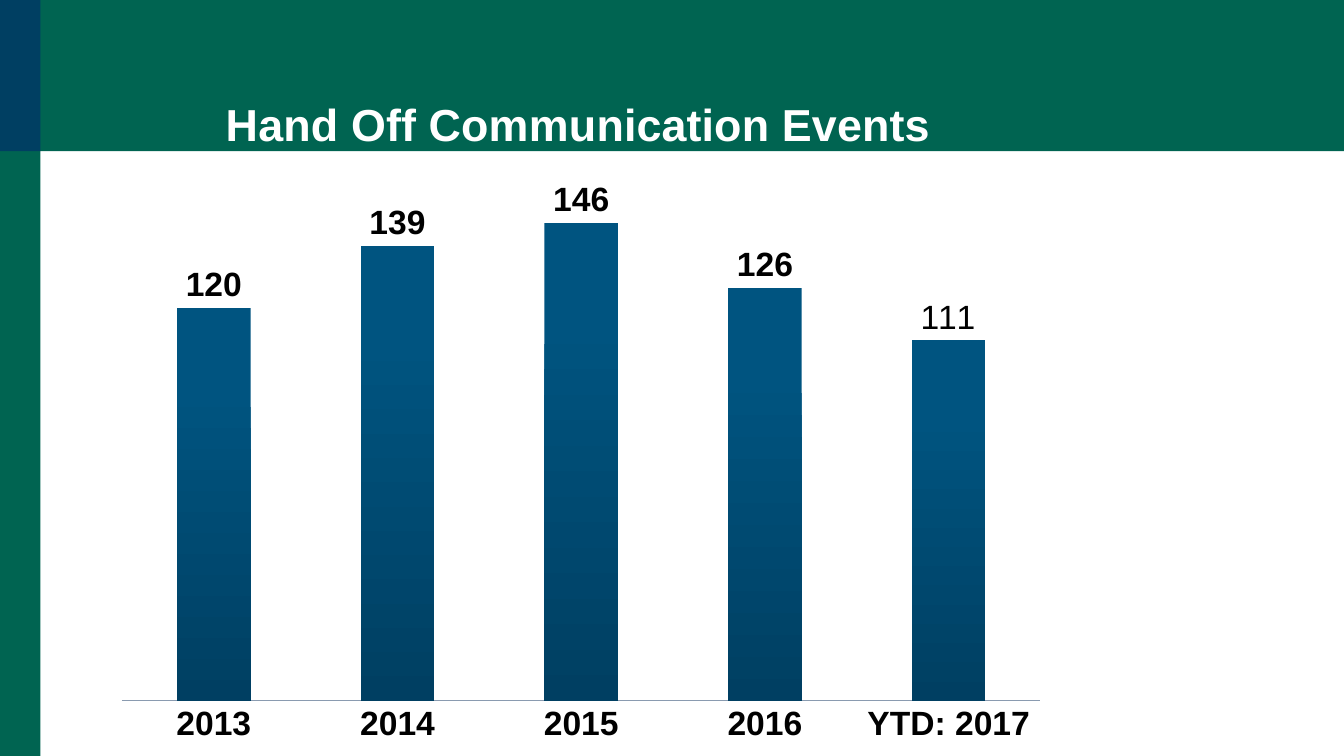
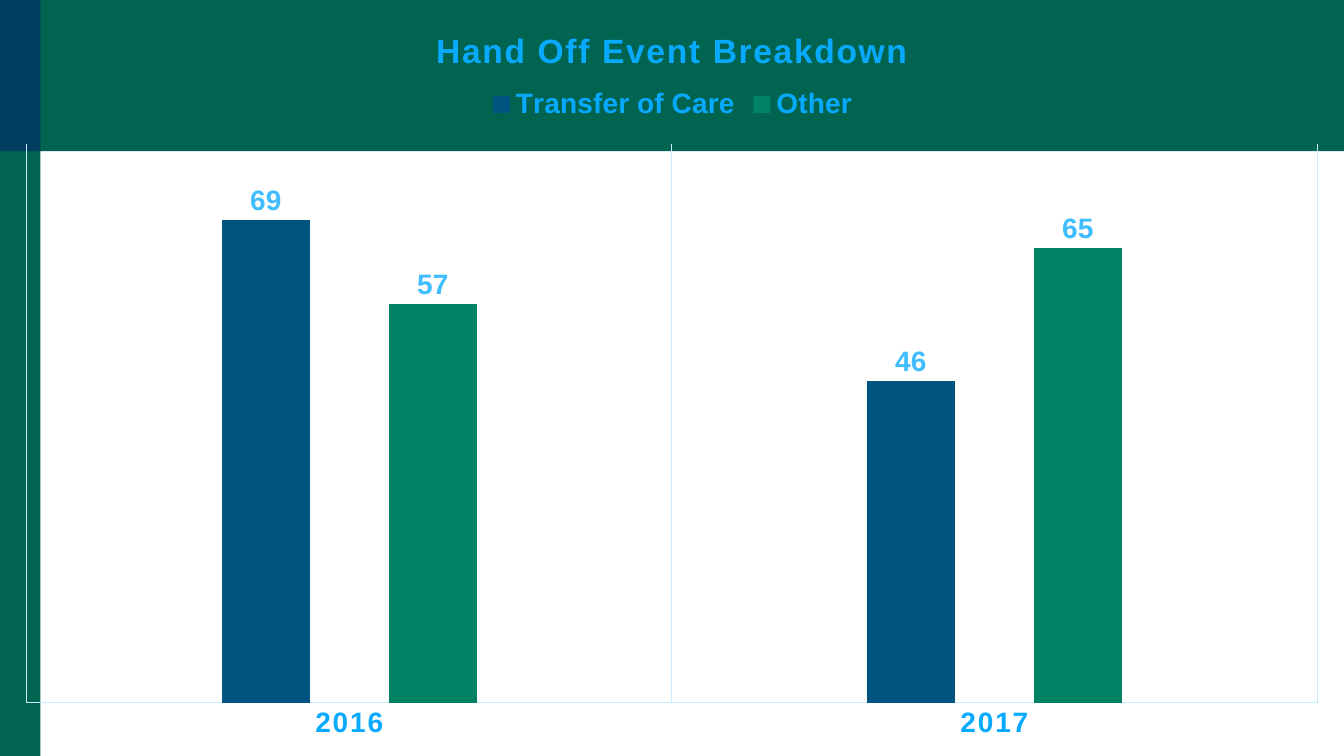
from dataclasses import dataclass
from typing import Optional

from lxml import etree
from pptx import Presentation
from pptx.chart.chart import Chart
from pptx.chart.data import CategoryChartData
from pptx.dml.color import RGBColor
from pptx.enum.chart import XL_CHART_TYPE, XL_LABEL_POSITION, XL_LEGEND_POSITION, XL_TICK_MARK
from pptx.enum.shapes import MSO_SHAPE
from pptx.oxml.ns import qn
from pptx.slide import Slide
from pptx.text.text import Font
from pptx.util import Inches, Pt

COLUMNS = XL_CHART_TYPE.COLUMN_CLUSTERED
OUTSIDE_END = XL_LABEL_POSITION.OUTSIDE_END
LEGEND_TOP = XL_LEGEND_POSITION.TOP
NO_TICK = XL_TICK_MARK.NONE
RECTANGLE = MSO_SHAPE.RECTANGLE

FONT_NAME = "Arial"
WHITE = RGBColor(0xFF, 0xFF, 0xFF)
BLACK = RGBColor(0x00, 0x00, 0x00)
DARK_GREEN = RGBColor(0x00, 0x64, 0x51)
GREEN = RGBColor(0x00, 0x82, 0x65)
NAVY = RGBColor(0x00, 0x3F, 0x62)
BLUE = RGBColor(0x00, 0x54, 0x80)
BRIGHT_BLUE = RGBColor(0x07, 0xAA, 0xFF)
SKY_BLUE = RGBColor(0x40, 0xBD, 0xFF)
PALE_BLUE = RGBColor(0xC6, 0xEB, 0xFF)
GREY_BLUE = RGBColor(0x8A, 0x9B, 0xB0)

SLIDE_WIDTH, SLIDE_HEIGHT = 13.33, 7.5
HEADER_HEIGHT, SIDEBAR_WIDTH = 1.5, 0.4


@dataclass(frozen=True)
class Band:
    width: float
    height: float
    color: RGBColor


@dataclass(frozen=True)
class Series:
    name: str
    values: tuple[int, ...]
    color: RGBColor
    fade_to: Optional[RGBColor] = None


@dataclass(frozen=True)
class ColumnChart:
    title: str
    title_size: int
    title_color: RGBColor
    title_place: tuple[float, float]
    spacing: int
    box: tuple[float, float, float, float]
    plot_place: tuple[float, float, float, float]
    categories: tuple[str, ...]
    series: tuple[Series, ...]
    top_value: int
    gap: int
    overlap: int
    text_size: int
    axis_color: RGBColor
    axis_line: RGBColor
    label_color: RGBColor
    grid: bool = False
    legend_place: Optional[tuple[float, float]] = None


BANDS = (
    Band(SLIDE_WIDTH, HEADER_HEIGHT, DARK_GREEN),
    Band(SIDEBAR_WIDTH, SLIDE_HEIGHT, DARK_GREEN),
    Band(SIDEBAR_WIDTH, HEADER_HEIGHT, NAVY),
)

YEARLY_EVENTS = ColumnChart(
    title="Hand Off Communication Events",
    title_size=32,
    title_color=WHITE,
    title_place=(0.12, 0.03),
    spacing=0,
    box=(1.02, 0.66, 9.49, 6.84),
    plot_place=(0.02, 0.16, 0.96, 0.76),
    categories=("2013", "2014", "2015", "2016", "YTD: 2017"),
    series=(Series("Series 1", (120, 139, 146, 126, 110), BLUE, NAVY),),
    top_value=160,
    gap=150,
    overlap=-25,
    text_size=24,
    axis_color=BLACK,
    axis_line=GREY_BLUE,
    label_color=BLACK,
)

EVENT_BREAKDOWN = ColumnChart(
    title="Hand Off Event Breakdown",
    title_size=24,
    title_color=BRIGHT_BLUE,
    title_place=(0.32, 0.03),
    spacing=120,
    box=(0, 0, SLIDE_WIDTH, SLIDE_HEIGHT),
    plot_place=(0.02, 0.19, 0.96, 0.74),
    categories=("2016", "2017"),
    series=(
        Series("Transfer of Care", (69, 46), BLUE),
        Series("Other", (57, 65), GREEN),
    ),
    top_value=80,
    gap=444,
    overlap=-90,
    text_size=20,
    axis_color=BRIGHT_BLUE,
    axis_line=PALE_BLUE,
    label_color=SKY_BLUE,
    grid=True,
    legend_place=(0.36, 0.11),
)


def style_font(font: Font, size: int, color: RGBColor, bold: bool = True, spacing: int = 0) -> None:
    font.name = FONT_NAME
    font.size = Pt(size)
    font.bold = bold
    font.color.rgb = color
    if spacing:
        font._element.set("spc", str(spacing))


def place(part: etree._Element, index: int, fractions: tuple[float, ...], inner: bool = False) -> None:
    for old_layout in part.findall(qn("c:layout")):
        part.remove(old_layout)
    layout = etree.Element(qn("c:layout"))
    manual = etree.SubElement(layout, qn("c:manualLayout"))
    settings = [("layoutTarget", "inner")] if inner else []
    settings += [("xMode", "edge"), ("yMode", "edge")]
    settings += [(key, str(value)) for key, value in zip("xywh", fractions)]
    for key, value in settings:
        etree.SubElement(manual, qn(f"c:{key}")).set("val", value)
    part.insert(index, layout)


def add_bands(slide: Slide) -> None:
    for band in BANDS:
        rectangle = slide.shapes.add_shape(RECTANGLE, 0, 0, Inches(band.width), Inches(band.height))
        rectangle.shadow.inherit = False
        rectangle.fill.solid()
        rectangle.fill.fore_color.rgb = band.color
        rectangle.line.fill.background()


def style_title(chart: Chart, content: ColumnChart) -> None:
    chart.has_title = True
    run = chart.chart_title.text_frame.paragraphs[0].add_run()
    run.text = content.title
    style_font(run.font, content.title_size, content.title_color, spacing=content.spacing)
    place(chart.chart_title._element, 1, content.title_place)


def style_axes(chart: Chart, content: ColumnChart) -> None:
    value_axis = chart.value_axis
    value_axis.minimum_scale = 0
    value_axis.maximum_scale = content.top_value
    value_axis.has_major_gridlines = False
    value_axis.visible = False
    category_axis = chart.category_axis
    category_axis.major_tick_mark = NO_TICK
    category_axis.minor_tick_mark = NO_TICK
    style_font(category_axis.tick_labels.font, content.text_size, content.axis_color, spacing=content.spacing)
    category_axis.has_major_gridlines = content.grid
    lines = [category_axis.format.line]
    if content.grid:
        lines.append(category_axis.major_gridlines.format.line)
    for line in lines:
        line.color.rgb = content.axis_line
        line.width = Pt(0.75)


def style_series(chart: Chart, content: ColumnChart) -> None:
    plot = chart.plots[0]
    plot.vary_by_categories = False
    plot.gap_width = content.gap
    plot.overlap = content.overlap
    for columns, series in zip(plot.series, content.series):
        fill = columns.format.fill
        if series.fade_to is None:
            fill.solid()
            fill.fore_color.rgb = series.color
        else:
            fill.gradient()
            fill.gradient_angle = 270
            start, end = fill.gradient_stops
            start.color.rgb, start.position = series.color, 0.2
            end.color.rgb, end.position = series.fade_to, 1.0
        labels = columns.data_labels
        labels.show_value = True
        labels.position = OUTSIDE_END
        style_font(labels.font, content.text_size, content.label_color)


def add_column_chart(slide: Slide, content: ColumnChart) -> Chart:
    data = CategoryChartData()
    data.categories = content.categories
    for series in content.series:
        data.add_series(series.name, series.values)
    box = [Inches(length) for length in content.box]
    chart = slide.shapes.add_chart(COLUMNS, *box, data).chart
    style_font(chart.font, content.text_size, BLUE)
    style_title(chart, content)
    style_axes(chart, content)
    style_series(chart, content)
    place(chart._chartSpace.chart.plotArea, 0, content.plot_place, inner=True)
    chart.has_legend = content.legend_place is not None
    if content.legend_place is not None:
        chart.legend.position = LEGEND_TOP
        chart.legend.include_in_layout = False
        style_font(chart.legend.font, content.text_size, BRIGHT_BLUE)
        place(chart.legend._element, 1, content.legend_place)
    return chart


def relabel_last_column(chart: Chart, content: ColumnChart, text: str) -> None:
    last = len(content.categories) - 1
    label = chart.plots[0].series[0].points[last].data_label
    run = label.text_frame.paragraphs[0].add_run()
    run.text = text
    style_font(run.font, content.text_size, content.label_color, bold=False)
    label.position = OUTSIDE_END


def main() -> None:
    deck = Presentation()
    deck.slide_width = Inches(SLIDE_WIDTH)
    deck.slide_height = Inches(SLIDE_HEIGHT)
    blank = deck.slide_layouts[6]
    charts = []
    for content in (YEARLY_EVENTS, EVENT_BREAKDOWN):
        slide = deck.slides.add_slide(blank)
        add_bands(slide)
        charts.append(add_column_chart(slide, content))
    relabel_last_column(charts[0], YEARLY_EVENTS, "111")
    deck.save("out.pptx")


if __name__ == "__main__":
    main()
